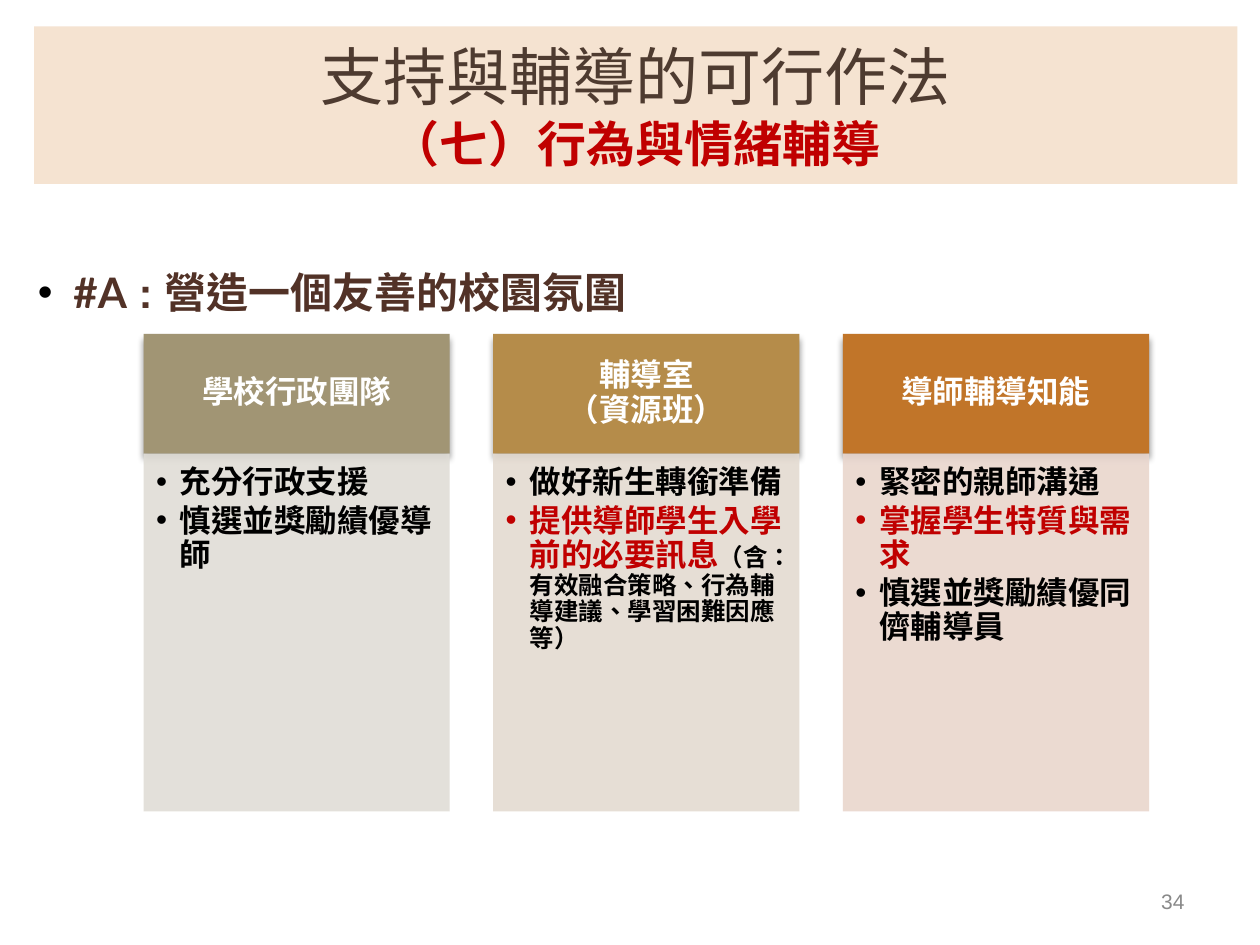
from lxml import etree
from pptx import Presentation
from pptx.dml.color import RGBColor
from pptx.enum.lang import MSO_LANGUAGE_ID
from pptx.enum.shapes import MSO_SHAPE
from pptx.enum.text import MSO_ANCHOR, MSO_AUTO_SIZE, PP_ALIGN
from pptx.oxml.ns import qn
from pptx.util import Inches, Pt

RECTANGLE = MSO_SHAPE.RECTANGLE
TOP, MIDDLE = MSO_ANCHOR.TOP, MSO_ANCHOR.MIDDLE
LEFT, CENTER, RIGHT = PP_ALIGN.LEFT, PP_ALIGN.CENTER, PP_ALIGN.RIGHT
NO_AUTOFIT = MSO_AUTO_SIZE.NONE
CHINESE = MSO_LANGUAGE_ID.TRADITIONAL_CHINESE

COLORS = {
    "black": "000000", "white": "FFFFFF", "red": "C00000", "gray": "898989",
    "banner": "F5E3D1", "title": "4E3B30", "heading": "523227",
}
PLAIN_INSETS = (0.1, 0.05, 0.1, 0.05)
HEADER_INSETS = (0.14, 0.08, 0.14, 0.08)
LIST_INSETS = (0.1, 0.1, 0.14, 0.16)
INDENT = Inches(0.19)


def child(parent, tag, **values):
    return etree.SubElement(parent, qn(tag), {key: str(value) for key, value in values.items()})


class SlideBuilder:
    def __init__(self, page):
        self.page = page

    def color(self, name):
        return RGBColor.from_string(COLORS.get(name, name))

    def place(self, box, left, top, width, height):
        box.left, box.top = Inches(left), Inches(top)
        box.width, box.height = Inches(width), Inches(height)

    def set_text(self, box, paras, anchor=MIDDLE, insets=PLAIN_INSETS, bullet=False, **layout):
        frame = box.text_frame
        left, top, right, bottom = map(Inches, insets)
        frame_format = {
            "word_wrap": True, "auto_size": NO_AUTOFIT, "vertical_anchor": anchor,
            "margin_left": left, "margin_top": top,
            "margin_right": right, "margin_bottom": bottom,
        }
        for key, value in frame_format.items():
            setattr(frame, key, value)
        for index, spans in enumerate(paras):
            para = frame.paragraphs[0] if index == 0 else frame.add_paragraph()
            para_format = {"space_before": Pt(0), "space_after": Pt(0), **layout}
            for key, value in para_format.items():
                setattr(para, key, value)
            if bullet:
                self.bullet(para)
            for text, size, color, bold, font in spans:
                span = para.add_run()
                span.text = text
                span_format = {"name": font, "size": Pt(size), "bold": bold, "language_id": CHINESE}
                for key, value in span_format.items():
                    setattr(span.font, key, value)
                span.font.color.rgb = self.color(color)

    def bullet(self, para):
        properties = para._p.get_or_add_pPr()
        properties.set("marL", str(INDENT))
        properties.set("indent", str(-INDENT))
        child(properties, "a:buFont", typeface="Arial")
        child(properties, "a:buChar", char="•")

    def fill(self, box, color):
        box.fill.solid()
        box.fill.fore_color.rgb = self.color(color)

    def title(self, bounds, paras):
        box = self.page.shapes.title
        self.place(box, *bounds)
        self.fill(box, "banner")
        self.set_text(box, paras, alignment=CENTER)

    def body(self, bounds, paras):
        box = self.page.placeholders[1]
        self.place(box, *bounds)
        self.set_text(box, paras, bullet=True, alignment=LEFT, line_spacing=1.5)

    def panel(self, bounds, color, paras, **style):
        box = self.page.shapes.add_shape(RECTANGLE, *map(Inches, bounds))
        box.shadow.inherit = False
        box.line.fill.background()
        self.fill(box, color)
        self.set_text(box, paras, line_spacing=0.9, **style)
        return box

    def header(self, bounds, color, lines):
        paras = [[(line, 18, "white", True, "Arial")] for line in lines]
        box = self.panel(bounds, color, paras, insets=HEADER_INSETS, alignment=CENTER)
        effects = box._element.spPr.find(qn("a:effectLst"))
        shadow = child(effects, "a:outerShdw", blurRad=Pt(4), dist=Pt(3), dir=5400000, rotWithShape=0)
        child(child(shadow, "a:srgbClr", val=COLORS["black"]), "a:alpha", val=43000)

    def points(self, bounds, color, items):
        paras = [[(text, size, tone, True, "Arial") for text, size, tone in item] for item in items]
        box = self.panel(bounds, color, paras, anchor=TOP, insets=LIST_INSETS, bullet=True,
                         alignment=LEFT, space_after=Pt(2.7))
        tint = box._element.spPr.find(qn("a:solidFill")).find(qn("a:srgbClr"))
        child(tint, "a:alpha", val=90000)

    def label(self, bounds, text):
        box = self.page.shapes.add_textbox(*map(Inches, bounds))
        self.set_text(box, [[(text, 12, "gray", False, "Arial")]], alignment=RIGHT)


COLUMNS = [
    (["學校行政團隊"], "A19574", "E0DDD6", [
        [("充分行政支援", 18, "black")],
        [("慎選並獎勵績優導師", 18, "black")],
    ]),
    (["輔導室", "（資源班）"], "B58C4A", "E4DBD1", [
        [("做好新生轉銜準備", 18, "black")],
        [("提供導師學生入學前的必要訊息", 18, "red"),
         ("（含：有效融合策略、行為輔導建議、學習困難因應等）", 14, "black")],
    ]),
    (["導師輔導知能"], "C17529", "E9D6CD", [
        [("緊密的親師溝通", 18, "black")],
        [("掌握學生特質與需求", 18, "red")],
        [("慎選並獎勵績優同儕輔導員", 18, "black")],
    ]),
]
FIRST_LEFT, LAST_LEFT, COLUMN_WIDTH = 1.14, 6.69, 2.43
HEADER_TOP, HEADER_HEIGHT, LIST_HEIGHT = 2.65, 0.95, 2.84


def main():
    deck = Presentation()
    deck.slide_width, deck.slide_height = Inches(10), Inches(7.5)
    builder = SlideBuilder(deck.slides.add_slide(deck.slide_layouts[1]))
    builder.title((0.27, 0.21, 9.55, 1.25), [
        [("支持與輔導的可行作法", 36, "title", False, "Arial")],
        [("（七）行為與情緒輔導", 28, "red", True, "Montserrat")],
    ])
    builder.body((0.2, 1.86, 9.14, 0.71), [[
        (" ", 24, "black", True, "Arial"),
        ("#A", 24, "heading", True, "Lato"),
        (" : 營造一個友善的校園氛圍", 24, "heading", True, "Arial"),
    ]])
    pitch = (LAST_LEFT - FIRST_LEFT) / (len(COLUMNS) - 1)
    for index, (lines, header_color, list_color, items) in enumerate(COLUMNS):
        left = FIRST_LEFT + index * pitch
        builder.header((left, HEADER_TOP, COLUMN_WIDTH, HEADER_HEIGHT), header_color, lines)
        builder.points((left, HEADER_TOP + HEADER_HEIGHT, COLUMN_WIDTH, LIST_HEIGHT), list_color, items)
    builder.label((7.17, 6.95, 2.33, 0.4), "34")
    deck.save("out.pptx")


if __name__ == "__main__":
    main()
